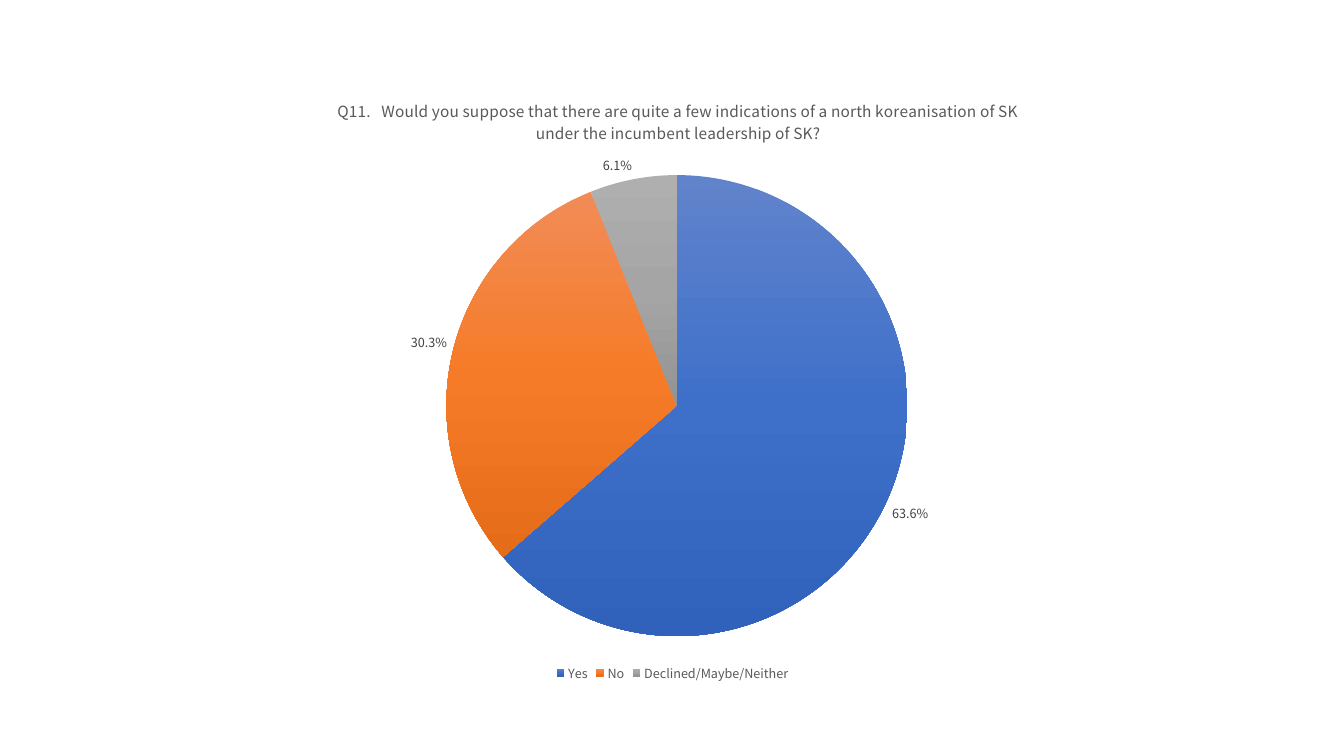
from lxml import etree
from pptx import Presentation
from pptx.chart.data import CategoryChartData
from pptx.dml.color import RGBColor
from pptx.enum import chart as ch
from pptx.oxml import parse_xml
from pptx.oxml.ns import nsdecls, qn
from pptx.util import Cm, Pt

QUESTION = ("Q11.   Would you suppose that there are quite a few indications of a "
            "north koreanisation of SK under the incumbent leadership of SK?")
# answer, share, gradient from top to bottom
ANSWERS = [
    ("Yes", 0.636, ("6183CB", "3E70CA", "3062BB")),
    ("No", 0.303, ("F18C57", "F67B28", "E56C19")),
    ("Declined/Maybe/Neither", 0.061, ("AFAFAF", "A5A5A5", "939393")),
]
FONT = "Noto Sans CJK KR"
BLACK = RGBColor(0x00, 0x00, 0x00)
TITLE_GREY = RGBColor(0x59, 0x59, 0x59)
LABEL_GREY = RGBColor(0x40, 0x40, 0x40)
# fractions of the chart area
TITLE_PLACE = {"x": 0.13, "y": 0.04}
PIE_PLACE = {"x": 0.25, "y": 0.17, "w": 0.51, "h": 0.75}


def style(font, size, color):
    font.name, font.size, font.bold = FONT, Pt(size), False
    font.color.rgb = color


def manual_layout(place, inner=False):
    """Return a c:layout element that fixes a chart part at the given fractions."""
    layout = parse_xml(f"<c:layout {nsdecls('c')}><c:manualLayout/></c:layout>")
    settings = [("layoutTarget", "inner")] if inner else []
    settings += [(f"{key}Mode", "edge") for key in ("x", "y")]
    settings += place.items()
    for tag, value in settings:
        etree.SubElement(layout[0], qn(f"c:{tag}")).set("val", str(value))
    return layout


def vertical_gradient(colors):
    stops = "".join(
        f'<a:gs pos="{i * 50000}"><a:srgbClr val="{color}"/></a:gs>'
        for i, color in enumerate(colors))
    return parse_xml(f"<a:gradFill {nsdecls('a')}><a:gsLst>{stops}</a:gsLst>"
                     '<a:lin ang="5400000" scaled="0"/></a:gradFill>')


prs = Presentation()
prs.slide_width, prs.slide_height = Cm(33.87), Cm(19.05)
s = prs.slides.add_slide(prs.slide_layouts[6])

data = CategoryChartData(number_format="0.0%")
data.categories = [answer for answer, _, _ in ANSWERS]
data.add_series(QUESTION, [share for _, share, _ in ANSWERS])
chart = s.shapes.add_chart(ch.XL_CHART_TYPE.PIE, Cm(5.44), Cm(1.78),
                           Cm(23.01), Cm(15.49), data).chart
style(chart.font, 10, BLACK)

chart.has_title = True
tf = chart.chart_title.text_frame
tf.text = QUESTION
style(tf.paragraphs[0].runs[0].font, 11, TITLE_GREY)
title = chart.chart_title._element
for old in title.findall(qn("c:layout")):
    title.remove(old)
title.find(qn("c:tx")).addnext(manual_layout(TITLE_PLACE))

chart.has_legend = True
chart.legend.position = ch.XL_LEGEND_POSITION.BOTTOM
chart.legend.include_in_layout = False
style(chart.legend.font, 9, TITLE_GREY)

plot = chart.plots[0]
plot.vary_by_categories = True
plot_area = plot._element.getparent()
for old in plot_area.findall(qn("c:layout")):
    plot_area.remove(old)
plot_area.insert(0, manual_layout(PIE_PLACE, inner=True))

series = plot.series[0]
for i, (_, _, colors) in enumerate(ANSWERS):
    fmt = series.points[i].format
    fmt.line.fill.background()
    fmt.line._get_or_add_ln().addprevious(vertical_gradient(colors))

labels = series.data_labels
labels.show_value = True
labels.number_format, labels.number_format_is_linked = "0.0%", False
labels.position = ch.XL_LABEL_POSITION.OUTSIDE_END
style(labels.font, 9, LABEL_GREY)

prs.save("out.pptx")
